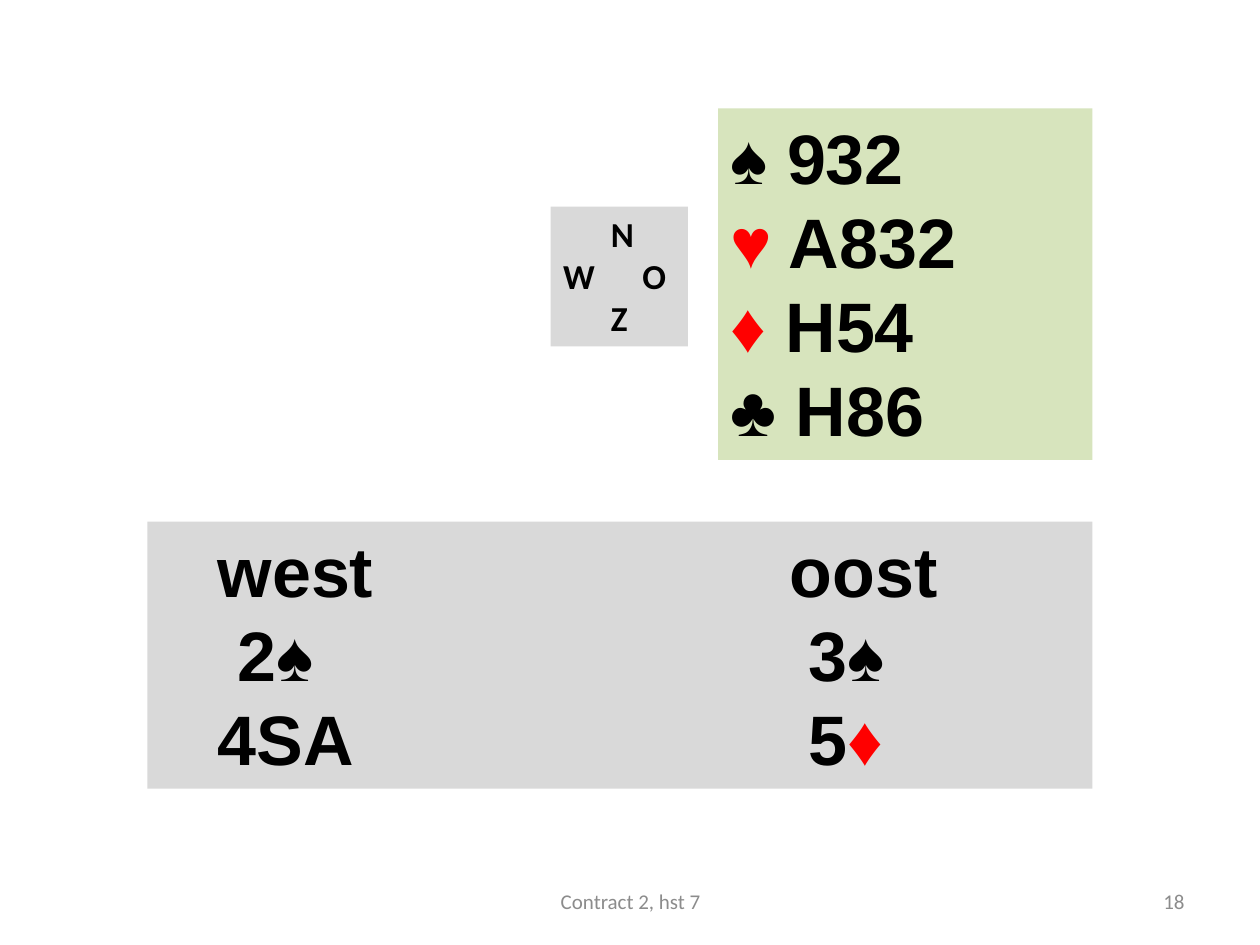
"""Build a bridge bidding slide with a hand, a compass and an auction."""
from dataclasses import dataclass
from itertools import groupby

import pptx
import pptx.dml.color
import pptx.enum.shapes
import pptx.enum.text
import pptx.oxml
import pptx.oxml.ns
import pptx.util
from pptx.util import Inches

RGBColor = pptx.dml.color.RGBColor
Align = pptx.enum.text.PP_ALIGN
BLACK = RGBColor(0x00, 0x00, 0x00)
RED = RGBColor(0xFF, 0x00, 0x00)
GREEN = RGBColor(0xD7, 0xE4, 0xBD)
GRAY = RGBColor(0xD9, 0xD9, 0xD9)
FOOTER_GRAY = RGBColor(0x8C, 0x8C, 0x8C)
LINE_FACTOR = 1.2


@dataclass
class Line:
    text: str
    tabs: tuple[float, ...] = ()


@dataclass
class Panel:
    left: float
    top: float
    width: float
    height: float
    fill: RGBColor
    font: str
    size: int
    lines: list[Line]


@dataclass
class Footer:
    text: str
    left: float
    width: float
    align: Align


PANELS = [
    Panel(5.7, 0.86, 2.97, 2.79, GREEN, "Arial", 40,
          [Line("♠ 932"), Line("♥ A832"), Line("♦ H54"), Line("♣ H86")]),
    Panel(4.37, 1.64, 1.09, 1.11, GRAY, "Calibri", 20,
          [Line("\tN", (0.38,)), Line("W\tO", (0.63,)), Line("\tZ", (0.38,))]),
    Panel(1.17, 4.14, 7.5, 2.12, GRAY, "Arial", 40,
          [Line("\twest\toost", (0.46, 5.0)),
           Line("\t2♠\t3♠", (0.62, 5.15)),
           Line("\t4SA\t5♦", (0.46, 5.15))]),
]
FOOTERS = [
    Footer("18", 7.17, 2.33, Align.RIGHT),
    Footer("Contract 2, hst 7", 3.42, 3.17, Align.CENTER),
]


def suit_color(character: str) -> RGBColor:
    return RED if character in "♥♦" else BLACK


def set_tabs(para, tabs: tuple[float, ...]) -> None:
    properties = para._p.get_or_add_pPr()
    tab_list = pptx.oxml.parse_xml(f"<a:tabLst {pptx.oxml.ns.nsdecls('a')}/>")
    for position in tabs:
        stop = pptx.oxml.parse_xml(f"<a:tab {pptx.oxml.ns.nsdecls('a')}/>")
        stop.set("pos", str(int(Inches(position))))
        stop.set("algn", "l")
        tab_list.append(stop)
    properties.append(tab_list)


def format_span(span, font: str, size: int, color: RGBColor, bold: bool) -> None:
    span.font.name = font
    span.font.size = pptx.util.Pt(size)
    span.font.bold = bold
    span.font.color.rgb = color


def draw_panel(page, panel: Panel) -> None:
    box = page.shapes.add_shape(
        pptx.enum.shapes.MSO_SHAPE.RECTANGLE, Inches(panel.left), Inches(panel.top),
        Inches(panel.width), Inches(panel.height))
    box.shadow.inherit = False
    box.fill.solid()
    box.fill.fore_color.rgb = panel.fill
    box.line.fill.background()
    frame = box.text_frame
    frame.word_wrap = True
    frame.vertical_anchor = pptx.enum.text.MSO_ANCHOR.TOP
    for index, line in enumerate(panel.lines):
        para = frame.add_paragraph() if index else frame.paragraphs[0]
        para.alignment = Align.LEFT
        para.line_spacing = pptx.util.Pt(panel.size * LINE_FACTOR)
        if line.tabs:
            set_tabs(para, line.tabs)
        for color, characters in groupby(line.text, suit_color):
            span = para.add_run()
            span.text = "".join(characters)
            format_span(span, panel.font, panel.size, color, True)


def draw_footer(page, footer: Footer) -> None:
    box = page.shapes.add_textbox(
        Inches(footer.left), Inches(6.95), Inches(footer.width), Inches(0.4))
    frame = box.text_frame
    frame.word_wrap = True
    frame.vertical_anchor = pptx.enum.text.MSO_ANCHOR.MIDDLE
    frame.text = footer.text
    para = frame.paragraphs[0]
    para.alignment = footer.align
    format_span(para.runs[0], "Calibri", 12, FOOTER_GRAY, False)


def main() -> None:
    deck = pptx.Presentation()
    deck.slide_width, deck.slide_height = Inches(10), Inches(7.5)
    page = deck.slides.add_slide(deck.slide_layouts.get_by_name("Blank"))
    for panel in PANELS:
        draw_panel(page, panel)
    for footer in FOOTERS:
        draw_footer(page, footer)
    deck.save("out.pptx")


if __name__ == "__main__":
    main()
